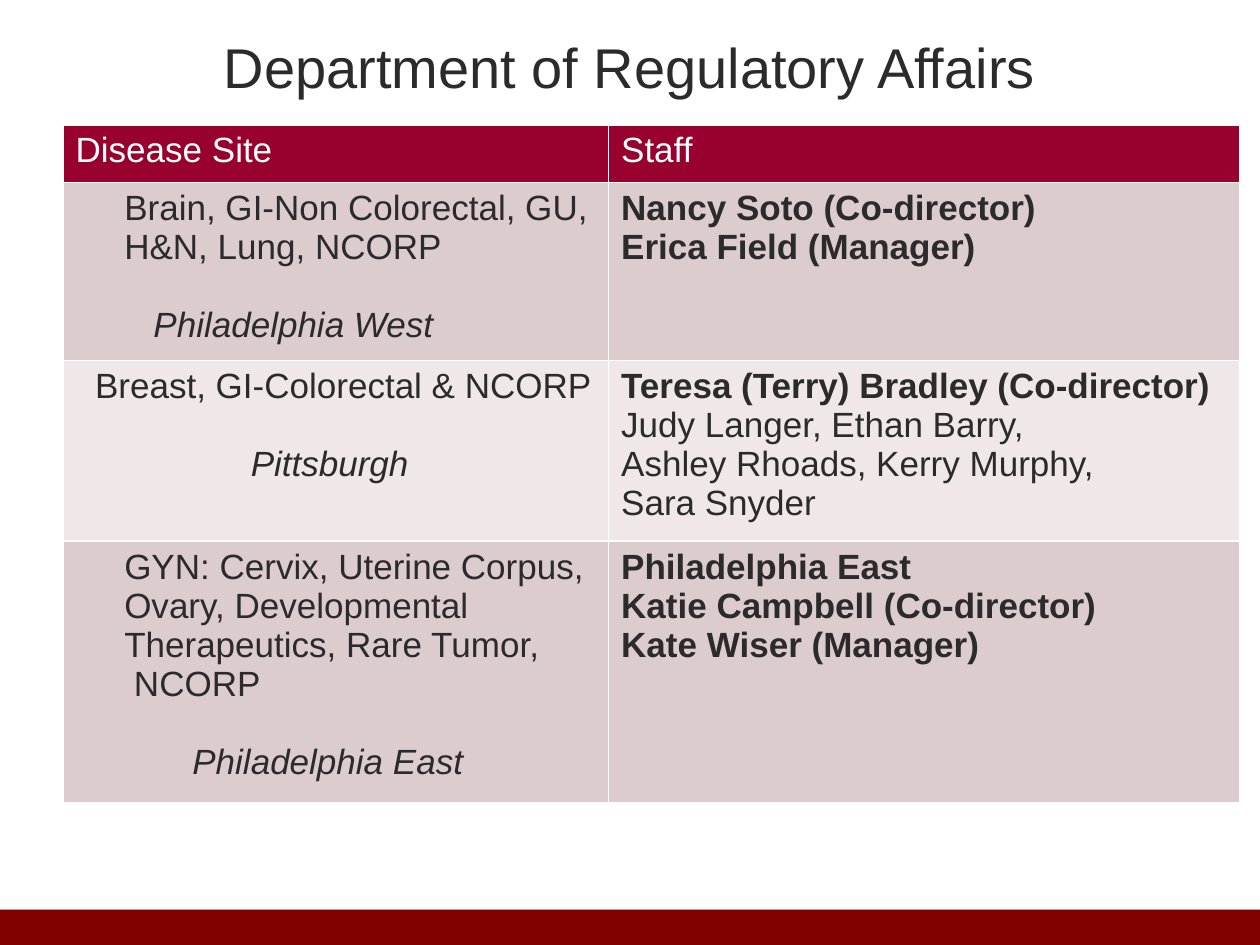
import dataclasses

import lxml.etree
import pptx
import pptx.dml.color
import pptx.enum.shapes
import pptx.enum.text
import pptx.oxml
import pptx.oxml.ns
import pptx.util


@dataclasses.dataclass(frozen=True)
class Theme:
    """Colours, type sizes and spacing of the slide."""
    font: str = "Arial"
    ink: str = "2B2B2B"
    light: str = "FFFFFF"
    header: str = "98012E"
    bands: tuple = ("DDCCCD", "EFE7E8")
    footer: str = "800000"
    title_size: float = 32
    body_size: float = 20
    line_gap: float = 22.3
    indent_step: float = 5.56


@dataclasses.dataclass(frozen=True)
class Line:
    """One line of a table cell, with its indent in steps."""
    text: str
    indent: int = 0
    bold: bool = False
    italic: bool = False
    gap: bool = False


THEME = Theme()
WIDTH, HEIGHT = 10, 7.5
HEADINGS = ("Disease Site", "Staff")
COLUMN_WIDTHS = (4.33, 5.01)
HEADER_HEIGHT, ROW_HEIGHTS = 0.46, (1.34, 1.34, 1.96)
ROWS = (
    ((Line("Brain, GI-Non Colorectal, GU,", 5),
      Line("H&N, Lung, NCORP", 5),
      Line("Philadelphia West", 8, italic=True, gap=True)),
     (Line("Nancy Soto (Co-director)", bold=True),
      Line("Erica Field (Manager)", bold=True))),
    ((Line("Breast, GI-Colorectal & NCORP", 2),
      Line("Pittsburgh", 18, italic=True, gap=True)),
     (Line("Teresa (Terry) Bradley (Co-director)", bold=True),
      Line("Judy Langer, Ethan Barry,"),
      Line("Ashley Rhoads, Kerry Murphy,"),
      Line("Sara Snyder"))),
    ((Line("GYN: Cervix, Uterine Corpus,", 5),
      Line("Ovary, Developmental", 5),
      Line("Therapeutics, Rare Tumor,", 5),
      Line("NCORP", 6),
      Line("Philadelphia East", 12, italic=True, gap=True)),
     (Line("Philadelphia East", bold=True),
      Line("Katie Campbell (Co-director)", bold=True),
      Line("Kate Wiser (Manager)", bold=True))),
)


def rgb(value):
    """Return a colour object for a hex string."""
    return pptx.dml.color.RGBColor.from_string(value)


def inches(*values):
    """Return the values as lengths in inches."""
    return [pptx.util.Inches(value) for value in values]


def style_run(r, size, color, bold=False, italic=False):
    """Apply the theme font to a run."""
    r.font.name = THEME.font
    r.font.size = pptx.util.Pt(size)
    r.font.color.rgb = rgb(color)
    r.font.bold, r.font.italic = bold, italic


def fill_cell(cell, lines, fill, color):
    """Write lines into a table cell and colour it."""
    cell.fill.solid()
    cell.fill.fore_color.rgb = rgb(fill)
    tf = cell.text_frame
    tf.text = "\n".join(line.text for line in lines)
    for p, line in zip(tf.paragraphs, lines):
        if line.indent:
            margin = pptx.util.Pt(line.indent * THEME.indent_step)
            p._p.get_or_add_pPr().set("marL", str(int(margin)))
        if line.gap:
            p.space_before = pptx.util.Pt(THEME.line_gap)
        style_run(p.runs[0], THEME.body_size, color, line.bold, line.italic)


def add_footer(s, box):
    """Draw the footer band with its soft shadow."""
    sp = s.shapes.add_shape(
        pptx.enum.shapes.MSO_SHAPE.RECTANGLE, *inches(*box))
    sp.fill.solid()
    sp.fill.fore_color.rgb = rgb(THEME.footer)
    sp.line.fill.background()
    sp.shadow.inherit = False
    effects = sp._element.spPr.find(pptx.oxml.ns.qn("a:effectLst"))
    shadow = lxml.etree.SubElement(
        effects, pptx.oxml.ns.qn("a:outerShdw"),
        blurRad=str(pptx.util.Pt(3.1)), dist=str(pptx.util.Pt(1.8)),
        dir="5400000", rotWithShape="0")
    color = lxml.etree.SubElement(
        shadow, pptx.oxml.ns.qn("a:srgbClr"), val="000000")
    lxml.etree.SubElement(color, pptx.oxml.ns.qn("a:alpha"), val="35000")


def add_title(s, box, text):
    """Place the centred slide title."""
    tf = s.shapes.add_textbox(*inches(*box)).text_frame
    tf.word_wrap = True
    tf.vertical_anchor = pptx.enum.text.MSO_ANCHOR.MIDDLE
    tf.text = text
    p = tf.paragraphs[0]
    p.alignment = pptx.enum.text.PP_ALIGN.CENTER
    style_run(p.runs[0], THEME.title_size, THEME.ink)


def add_staff_table(s, box):
    """Build the table of disease sites and staff."""
    table = s.shapes.add_table(
        len(ROWS) + 1, len(HEADINGS), *inches(*box)).table
    for column, width in zip(table.columns, COLUMN_WIDTHS):
        column.width = pptx.util.Inches(width)
    for row, height in zip(table.rows, (HEADER_HEIGHT, *ROW_HEIGHTS)):
        row.height = pptx.util.Inches(height)
    for c, heading in enumerate(HEADINGS):
        fill_cell(table.cell(0, c), [Line(heading)], THEME.header, THEME.light)
    for r, row in enumerate(ROWS):
        band = THEME.bands[r % len(THEME.bands)]
        for c, lines in enumerate(row):
            fill_cell(table.cell(r + 1, c), lines, band, THEME.ink)


def main():
    """Build and save the slide."""
    prs = pptx.Presentation()
    prs.slide_width, prs.slide_height = inches(WIDTH, HEIGHT)
    s = prs.slides.add_slide(prs.slide_layouts[6])
    margin, footer_height = 0.05 * WIDTH, 0.28
    add_footer(s, (0, HEIGHT - footer_height, WIDTH, footer_height))
    add_title(s, (margin, 0.19, WIDTH - 2 * margin, 0.67),
              "Department of Regulatory Affairs")
    add_staff_table(s, (margin, 0.99, sum(COLUMN_WIDTHS),
                        HEADER_HEIGHT + sum(ROW_HEIGHTS)))
    prs.save("out.pptx")


if __name__ == "__main__":
    main()
